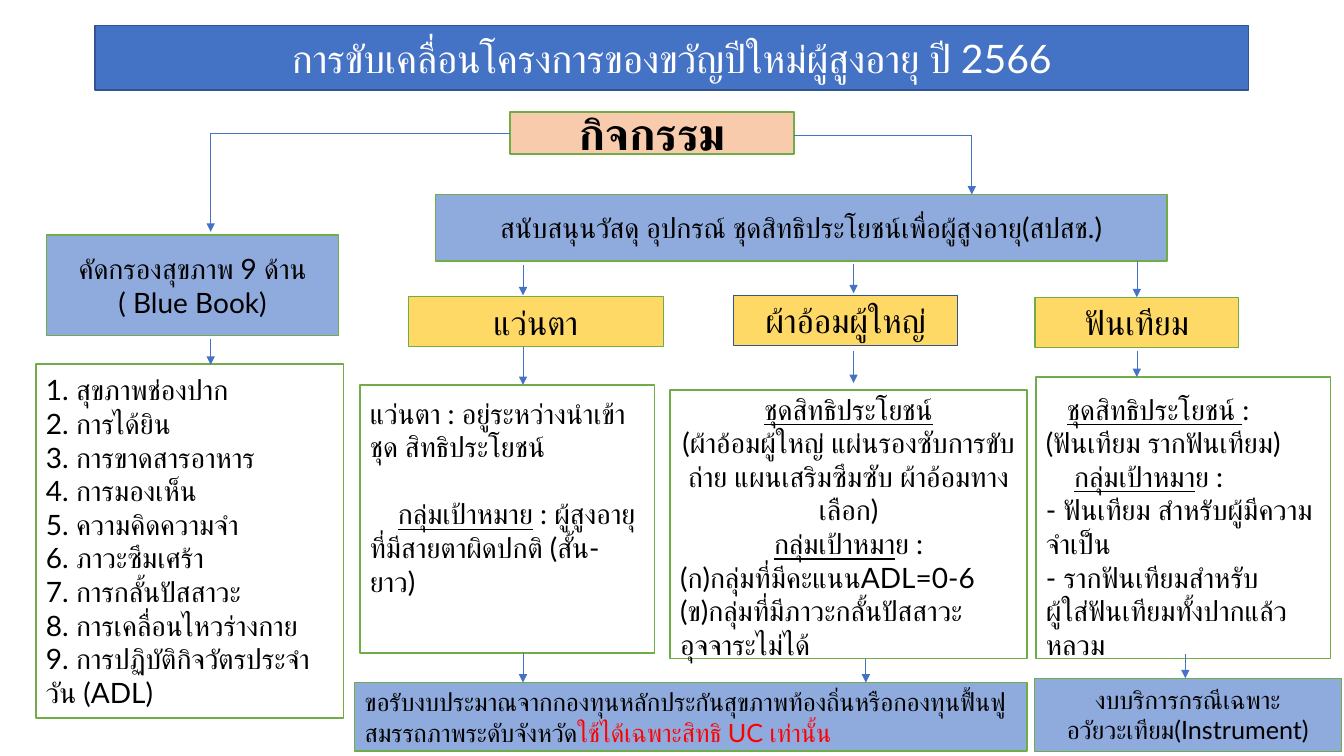
from lxml import etree
from pptx import Presentation
from pptx.dml.color import RGBColor
from pptx.enum.shapes import MSO_CONNECTOR, MSO_SHAPE
from pptx.enum.text import MSO_ANCHOR, MSO_AUTO_SIZE, PP_ALIGN
from pptx.oxml.ns import qn
from pptx.util import Cm, Pt

RECT = MSO_SHAPE.RECTANGLE
LINE = MSO_CONNECTOR.STRAIGHT
LEFT, MID = PP_ALIGN.LEFT, PP_ALIGN.CENTER
TOP, CORE = MSO_ANCHOR.TOP, MSO_ANCHOR.MIDDLE
FIXED = MSO_AUTO_SIZE.NONE


def tint(code):
    return RGBColor.from_string(code)


class Board:
    font = "Lato"
    ink, white, red = "000000", "FFFFFF", "FF0000"
    blue, navy, sky = "4472C4", "325491", "8FAADC"
    green, gold, peach = "70AD47", "FFD966", "F8CBAD"

    def __init__(self, deck):
        self.slide = deck.slides.add_slide(deck.slide_layouts[5])

    def dress(self, shape, fill, edge, width=1, pad=None):
        shape.fill.solid()
        shape.fill.fore_color.rgb = tint(fill)
        shape.line.color.rgb = tint(edge)
        shape.line.width = Pt(width)
        frame = shape.text_frame
        frame.word_wrap = True
        frame.auto_size = FIXED
        frame.vertical_anchor = CORE if pad is None else TOP
        if pad is not None:
            frame.margin_top = Cm(pad)
            frame.margin_bottom = 0
        return shape

    def title(self, text, x, y, w, h):
        shape = self.slide.shapes.title
        shape.left, shape.top, shape.width, shape.height = map(Cm, (x, y, w, h))
        self.dress(shape, self.blue, self.navy)
        self.say(shape, text, size=28, color=self.white)

    def box(self, x, y, w, h, fill, edge=green, width=1, pad=None):
        shape = self.slide.shapes.add_shape(RECT, *map(Cm, (x, y, w, h)))
        shape.shadow.inherit = False
        return self.dress(shape, fill, edge, width, pad)

    def say(self, shape, *runs, size=20, align=MID, color=ink,
            bold=False, indent=0, before=0):
        frame = shape.text_frame
        para = frame.paragraphs[0]
        if para.runs:
            para = frame.add_paragraph()
        para.alignment = align
        para.line_spacing = 1.0
        para.space_before = Pt(before)
        if indent:
            para._p.get_or_add_pPr().set("indent", str(Cm(indent)))
        for item in runs:
            text, line, hue = item if isinstance(item, tuple) else (item, False, color)
            run = para.add_run()
            run.text = text
            run.font.name = self.font
            run.font.size = Pt(size)
            run.font.bold = bold
            run.font.underline = line
            run.font.color.rgb = tint(hue)

    def under(self, text):
        return text, True, self.ink

    def link(self, x1, y1, x2, y2, head=True):
        line = self.slide.shapes.add_connector(LINE, *map(Cm, (x1, y1, x2, y2)))
        line.line.color.rgb = tint(self.blue)
        line.line.width = Pt(0.5)
        if head:
            etree.SubElement(line.line._get_or_add_ln(), qn("a:tailEnd"), type="triangle")
        etree.SubElement(line._element.spPr, qn("a:effectLst"))
        return line


def main():
    deck = Presentation()
    deck.slide_width, deck.slide_height = Cm(33.87), Cm(19.05)
    b = Board(deck)
    b.title("การขับเคลื่อนโครงการของขวัญปีใหม่ผู้สูงอายุ ปี 2566", 2.39, 0.64, 29.08, 1.63)

    root = b.box(12.85, 2.82, 7.16, 1.06, b.peach)
    b.say(root, "กิจกรรม", size=32, bold=True)

    screen = b.box(1.17, 5.92, 7.37, 2.54, b.sky)
    b.say(screen, "คัดกรองสุขภาพ 9 ด้าน")
    b.say(screen, "( Blue Book)")

    aid = b.box(10.97, 4.9, 18.44, 1.68, b.sky)
    b.say(aid, "สนับสนุนวัสดุ อุปกรณ์ ชุดสิทธิประโยชน์เพื่อผู้สูงอายุ(สปสช.)")

    heads = {}
    for name, x, y, w, edge in (
        ("แว่นตา", 10.29, 7.47, 6.43, b.green),
        ("ผ้าอ้อมผู้ใหญ่", 18.49, 7.44, 5.64, b.navy),
        ("ฟันเทียม", 26.08, 7.49, 5.14, b.green),
    ):
        heads[name] = b.box(x, y, w, 1.27, b.gold, edge)
        b.say(heads[name], name, size=24)

    checks = b.box(0.91, 9.17, 7.75, 8.92, b.white)
    topics = (
        "สุขภาพช่องปาก", "การได้ยิน", "การขาดสารอาหาร", "การมองเห็น",
        "ความคิดความจำ", "ภาวะซึมเศร้า", "การกลั้นปัสสาวะ",
        "การเคลื่อนไหวร่างกาย", "การปฏิบัติกิจวัตรประจำวัน (ADL)",
    )
    for n, topic in enumerate(topics, 1):
        b.say(checks, f"{n}. {topic}", align=LEFT)

    group = b.under("กลุ่มเป้าหมา")

    glass = b.box(9.07, 9.7, 7.42, 6.76, b.white, pad=0.28)
    b.say(glass, "แว่นตา : อยู่ระหว่างนำเข้าชุด สิทธิประโยชน์", align=LEFT)
    b.say(glass, b.under("กลุ่มเป้าหมาย"), " : ผู้สูงอายุที่มีสายตาผิดปกติ (สั้น-ยาว)",
          align=LEFT, indent=0.71, before=24)

    pads = b.box(16.89, 9.83, 8.99, 6.76, b.white, pad=0.05)
    b.say(pads, b.under("ชุดสิทธิประโยชน์"))
    b.say(pads, "(ผ้าอ้อมผู้ใหญ่ แผ่นรองซับการขับถ่าย แผนเสริมซึมซับ ผ้าอ้อมทางเลือก)")
    b.say(pads, group, "ย :")
    for text in ("(ก)กลุ่มที่มีคะแนนADL=0-6", "(ข)กลุ่มที่มีภาวะกลั้นปัสสาวะ", "อุจจาระไม่ได้"):
        b.say(pads, text, align=LEFT)

    teeth = b.box(26.11, 9.5, 7.42, 7.09, b.white, pad=0.38)
    b.say(teeth, b.under("ชุดสิทธิประโยชน์ "), ":", align=LEFT, indent=0.53)
    b.say(teeth, "(ฟันเทียม รากฟันเทียม)", align=LEFT)
    b.say(teeth, group, "ย :", align=LEFT, indent=0.71)
    for text in ("- ฟันเทียม สำหรับผู้มีความจำเป็น", "- รากฟันเทียมสำหรับ",
                 "ผู้ใส่ฟันเทียมทั้งปากแล้วหลวม"):
        b.say(teeth, text, align=LEFT)

    fund = b.box(8.94, 17.2, 16.94, 1.73, b.sky)
    b.say(fund,
          "ขอรับงบประมาณจากกองทุนหลักประกันสุขภาพท้องถิ่นหรือกองทุนฟื้นฟูสมรรถภาพระดับจังหวัด",
          ("ใช้ได้เฉพาะสิทธิ UC เท่านั้น", False, b.red), size=18, align=LEFT)

    tools = b.box(26.06, 17.09, 7.75, 1.83, b.sky, width=0.25)
    for text in ("งบบริการกรณีเฉพาะ", "อวัยวะเทียม(Instrument)"):
        b.say(tools, text, size=18)

    b.link(12.85, 3.35, 5.31, 3.35, head=False).begin_connect(root, 1)
    b.link(20.02, 3.4, 24.49, 3.4, head=False)
    b.link(28.65, 6.58, 28.65, 7.49).end_connect(heads["ฟันเทียม"], 0)
    for x, y1, y2 in (
        (5.31, 3.35, 5.84), (5.31, 8.53, 9.19), (24.49, 3.4, 4.9),
        (13.18, 6.68, 7.44), (13.18, 8.74, 9.7), (13.18, 16.46, 17.2),
        (21.51, 6.65, 7.39), (21.51, 8.84, 9.65), (21.82, 16.61, 17.2),
        (28.65, 8.84, 9.5), (29.87, 16.48, 17.09),
    ):
        b.link(x, y1, x, y2)

    deck.save("out.pptx")


if __name__ == "__main__":
    main()
